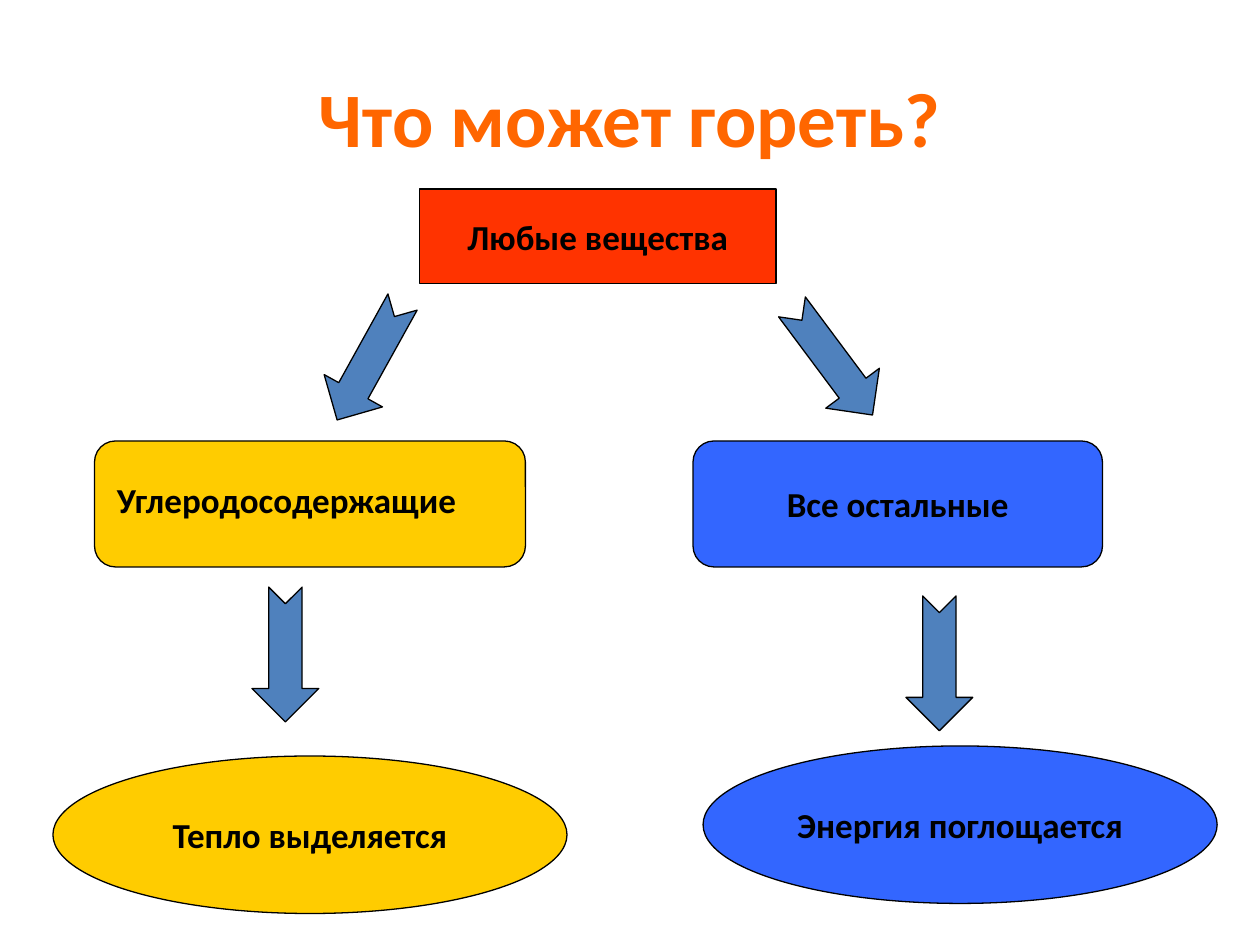
from dataclasses import dataclass

import pptx
import pptx.dml.color
import pptx.enum.shapes
import pptx.enum.text
import pptx.util

Inches = pptx.util.Inches
Pt = pptx.util.Pt
Shape = pptx.enum.shapes.MSO_SHAPE
Align = pptx.enum.text.PP_ALIGN
Anchor = pptx.enum.text.MSO_ANCHOR
AutoSize = pptx.enum.text.MSO_AUTO_SIZE


@dataclass(frozen=True)
class Theme:
    font: str = "Calibri"
    title_size: int = 44
    label_size: int = 20
    line_width: float = 0.75
    title: str = "FF6600"
    ink: str = "000000"
    source: str = "FF3300"
    carbon: str = "FFCC00"
    other: str = "3366FF"
    arrow: str = "4F81BD"


THEME = Theme()
ARROW_SIZE = (1.07, 0.53)


def rgb(value):
    return pptx.dml.color.RGBColor.from_string(value)


def write(holder, text, size, color, align=Align.CENTER, anchor=Anchor.MIDDLE, wrap=False):
    frame = holder.text_frame
    frame.word_wrap = wrap
    frame.vertical_anchor = anchor
    paragraph = frame.paragraphs[0]
    paragraph.alignment = align
    run = paragraph.add_run()
    run.text = text
    font_format = {"name": THEME.font, "size": Pt(size), "bold": True}
    for name, value in font_format.items():
        setattr(run.font, name, value)
    run.font.color.rgb = rgb(color)


def add_figure(slide, kind, box, fill):
    figure = slide.shapes.add_shape(kind, *map(Inches, box))
    figure.shadow.inherit = False
    figure.fill.solid()
    figure.fill.fore_color.rgb = rgb(fill)
    figure.line.color.rgb = rgb(THEME.ink)
    figure.line.width = Pt(THEME.line_width)
    return figure


def add_node(slide, kind, box, fill, text):
    node = add_figure(slide, kind, box, fill)
    write(node, text, THEME.label_size, THEME.ink)


def add_arrow(slide, left, top, rotation):
    arrow = add_figure(slide, Shape.NOTCHED_RIGHT_ARROW, (left, top, *ARROW_SIZE), THEME.arrow)
    arrow.rotation = rotation


def add_title(slide, box, text):
    title = slide.shapes.add_textbox(*map(Inches, box))
    write(title, text, THEME.title_size, THEME.title, wrap=True)


def add_inset_label(slide, box, text):
    label = slide.shapes.add_textbox(*map(Inches, box))
    write(label, text, THEME.label_size, THEME.ink, Align.LEFT, Anchor.TOP)
    label.text_frame.auto_size = AutoSize.SHAPE_TO_FIT_TEXT


def add_carbon_branch(slide, left, top):
    add_arrow(slide, left + 1.98, top, 119)
    add_figure(slide, Shape.ROUNDED_RECTANGLE, (left + 0.33, top + 0.9, 3.42, 1), THEME.carbon)
    add_inset_label(slide, (left + 0.41, top + 1.15, 3.25, 0.43), "Углеродосодержащие")
    add_arrow(slide, left + 1.31, top + 2.33, 90)
    add_node(slide, Shape.OVAL, (left, top + 3.4, 4.08, 1.25), THEME.carbon, "Тепло выделяется")


def add_other_branch(slide, left, top):
    add_arrow(slide, left + 0.57, top, 53.3)
    add_node(slide, Shape.ROUNDED_RECTANGLE, (left, top + 0.9, 3.25, 1), THEME.other,
             "Все остальные")
    add_arrow(slide, left + 1.42, top + 2.4, 90)
    add_node(slide, Shape.OVAL, (left + 0.08, top + 3.32, 4.08, 1.25), THEME.other,
             "Энергия поглощается")


def main():
    deck = pptx.Presentation()
    deck.slide_width = Inches(10)
    deck.slide_height = Inches(7.5)
    slide = deck.slides.add_slide(deck.slide_layouts[6])
    add_title(slide, (0.5, 0.3, 9, 1.25), "Что может гореть?")
    add_node(slide, Shape.FLOWCHART_PROCESS, (3.33, 1.5, 2.83, 0.75), THEME.source,
             "Любые вещества")
    add_carbon_branch(slide, 0.42, 2.6)
    add_other_branch(slide, 5.5, 2.6)
    deck.save("out.pptx")


if __name__ == "__main__":
    main()
